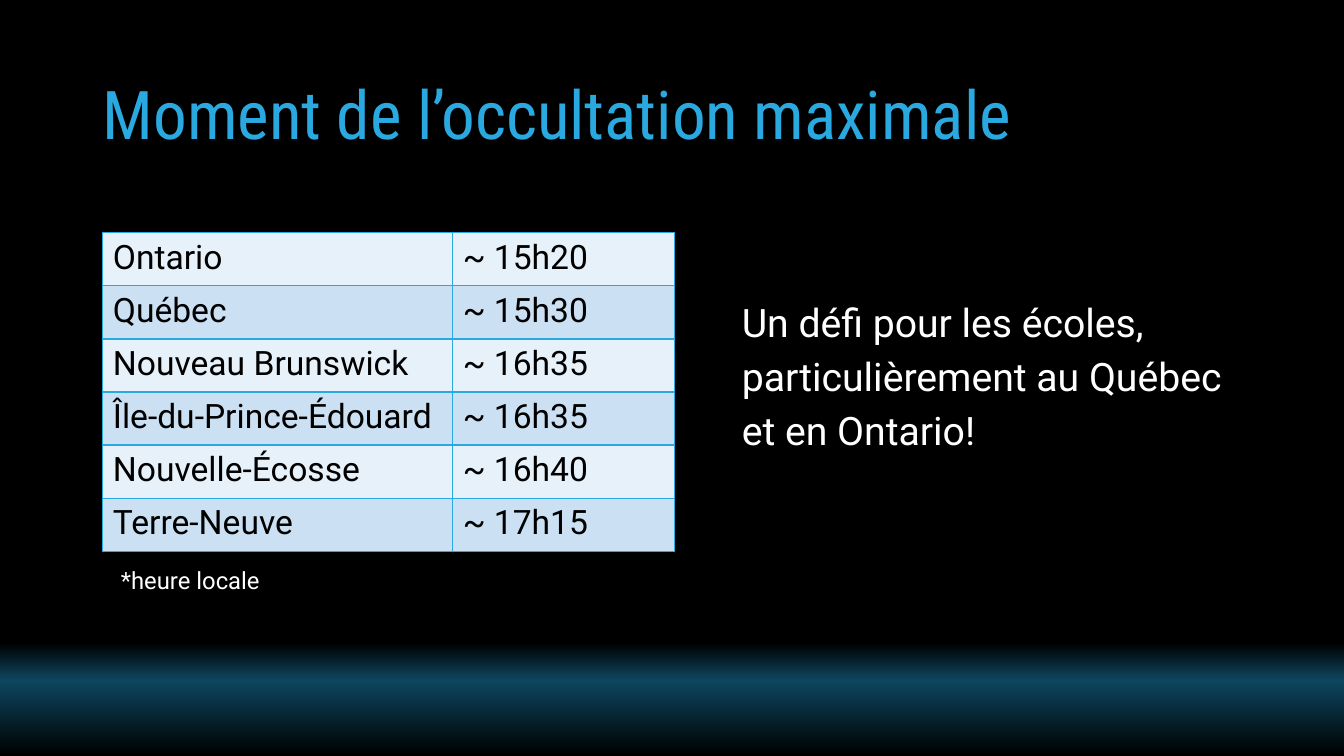
from lxml.etree import SubElement
from pptx import Presentation
from pptx.dml.color import RGBColor
from pptx.enum.text import MSO_ANCHOR, PP_ALIGN
from pptx.oxml.ns import qn
from pptx.util import Pt

PX = 9144  # EMU per px, at 100 px to the inch
BLUE, WHITE, BLACK = "2AA9E0", "FFFFFF", "000000"
BANDS = ["E7F1F9", "CBE1F3"]
GLOW = [(0, BLACK), (85, BLACK), (90, "0D465F"), (100, BLACK)]
TIMES = [
    ("Ontario", "~ 15h20"),
    ("Québec", "~ 15h30"),
    ("Nouveau Brunswick", "~ 16h35"),
    ("Île-du-Prince-Édouard", "~ 16h35"),
    ("Nouvelle-Écosse", "~ 16h40"),
    ("Terre-Neuve", "~ 17h15"),
]


def px(*sizes):
    return [size * PX for size in sizes]


def color(code):
    return RGBColor.from_string(code)


def write(frame, text, size, code, font="Roboto", lead=None):
    frame.text = text
    para = frame.paragraphs[0]
    para.alignment = PP_ALIGN.LEFT
    para.line_spacing = lead
    para.font.size = Pt(size)
    para.font.name = font
    para.font.color.rgb = color(code)


def paint_back(slide):
    fill = slide.background.fill
    fill.gradient()
    fill.gradient_angle = 270
    stops = slide.element.find(".//" + qn("a:gsLst"))
    stops.clear()
    for place, code in GLOW:
        stop = SubElement(stops, qn("a:gs"), pos=str(place * 1000))
        SubElement(stop, qn("a:srgbClr"), val=code)


def add_title(slide, text):
    title = slide.shapes.title
    title.left, title.top, title.width, title.height = px(92, 44, 1150, 145)
    write(title.text_frame, text, 48, BLUE, "Roboto Condensed", 0.9)
    title.text_frame.vertical_anchor = MSO_ANCHOR.MIDDLE


def add_text(slide, box, text, size, lead):
    frame = slide.shapes.add_textbox(*px(*box)).text_frame
    frame.word_wrap = True
    write(frame, text, size, WHITE, lead=lead)


def edge(cell):
    """Draw a thin blue line on all four sides of a cell."""
    props = cell._tc.get_or_add_tcPr()
    for side in ("lnL", "lnR", "lnT", "lnB"):
        line = SubElement(props, qn("a:" + side), w=str(Pt(1)))
        fill = SubElement(line, qn("a:solidFill"))
        SubElement(fill, qn("a:srgbClr"), val=BLUE)


def add_times(slide):
    box = px(102, 231, 567, 316)
    table = slide.shapes.add_table(len(TIMES), 2, *box).table
    table.first_row = table.horz_banding = False
    for col, width in zip(table.columns, px(347, 220)):
        col.width = width
    for r, row in enumerate(TIMES):
        for c, text in enumerate(row):
            cell = table.cell(r, c)
            write(cell.text_frame, text, 24, BLACK)
            edge(cell)
            cell.fill.solid()
            cell.fill.fore_color.rgb = color(BANDS[r % 2])


def main():
    deck = Presentation()
    deck.slide_width, deck.slide_height = px(1333, 750)
    slide = deck.slides.add_slide(deck.slide_layouts[5])
    paint_back(slide)
    add_title(slide, "Moment de l’occultation maximale")
    add_times(slide)
    add_text(slide, (110, 560, 270, 49), "*heure locale", 17, 0.9)
    add_text(
        slide,
        (726, 284, 524, 126),
        "Un défi pour les écoles, particulièrement au Québec et en Ontario!",
        28,
        1.15,
    )
    deck.save("out.pptx")


if __name__ == "__main__":
    main()
